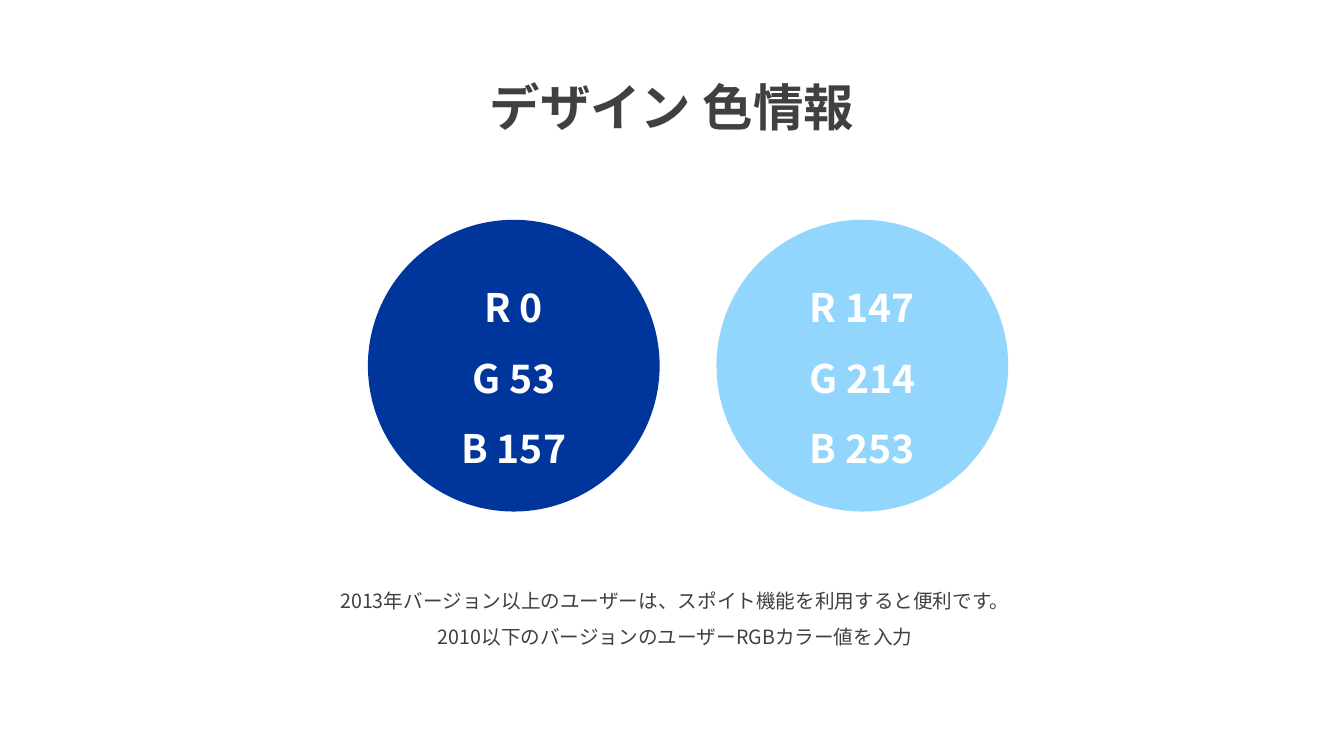
from pptx import Presentation
from pptx.dml.color import RGBColor
from pptx.enum.shapes import MSO_SHAPE as Shape
from pptx.enum.text import MSO_ANCHOR as Anchor, MSO_AUTO_SIZE as Fit, PP_ALIGN as Align
from pptx.oxml.ns import qn
from pptx.util import Pt
from lxml.etree import SubElement

# Content
FACE = "Noto Sans CJK KR"
GREY, WHITE = "404040", "FFFFFF"
TITLE = ["デザイン 色情報"]
SWATCHES = [
    ("00359C", ["R 0", "G 53", "B 157"]),
    ("93D6FD", ["R 147", "G 214", "B 253"]),
]
NOTES = [
    "2013年バージョン以上のユーザーは、スポイト機能を利用すると便利です。",
    "2010以下のバージョンのユーザーRGBカラー値を入力",
]

# Layout in points
WIDTH, HEIGHT = 960, 540
LEFT, TOP, SIZE, STEP = 262.8, 157, 208.4, 249
TITLE_BOX = (305.3, 28.8, 349.2, 65.5)
NOTES_BOX = (181.4, 409, 601.9, 55.4)


def color(code):
    return RGBColor.from_string(code)


def write(frame, lines, size, ink, bold=False, anchor=Anchor.TOP):
    frame.text = "\n".join(lines)
    frame.word_wrap = True
    frame.auto_size = Fit.NONE
    frame.vertical_anchor = anchor
    for par in frame.paragraphs:
        par.alignment = Align.CENTER
        par.line_spacing = 1.5
        par.space_before = Pt(0)
        font = par.font
        font.name, font.size, font.bold = FACE, Pt(size), bold
        font.color.rgb = color(ink)
        # East Asian text needs its own typeface entry
        props = par._p.pPr.find(qn("a:defRPr"))
        SubElement(props, qn("a:ea")).set("typeface", FACE)


def main():
    deck = Presentation()
    deck.slide_width, deck.slide_height = Pt(WIDTH), Pt(HEIGHT)
    slide = deck.slides.add_slide(deck.slide_layouts[5])

    # Title
    title = slide.shapes.title
    title.left, title.top, title.width, title.height = map(Pt, TITLE_BOX)
    write(title.text_frame, TITLE, 36, GREY, bold=True)

    # Color circles
    for i, (fill, lines) in enumerate(SWATCHES):
        disc = slide.shapes.add_shape(
            Shape.OVAL, Pt(LEFT + i * STEP), Pt(TOP), Pt(SIZE), Pt(SIZE))
        disc.shadow.inherit = False
        disc.fill.solid()
        disc.fill.fore_color.rgb = color(fill)
        disc.line.fill.background()
        write(disc.text_frame, lines, 28, WHITE, bold=True, anchor=Anchor.MIDDLE)

    # Usage notes
    notes = slide.shapes.add_textbox(*map(Pt, NOTES_BOX))
    write(notes.text_frame, NOTES, 14, GREY)

    deck.save("out.pptx")


if __name__ == "__main__":
    main()
